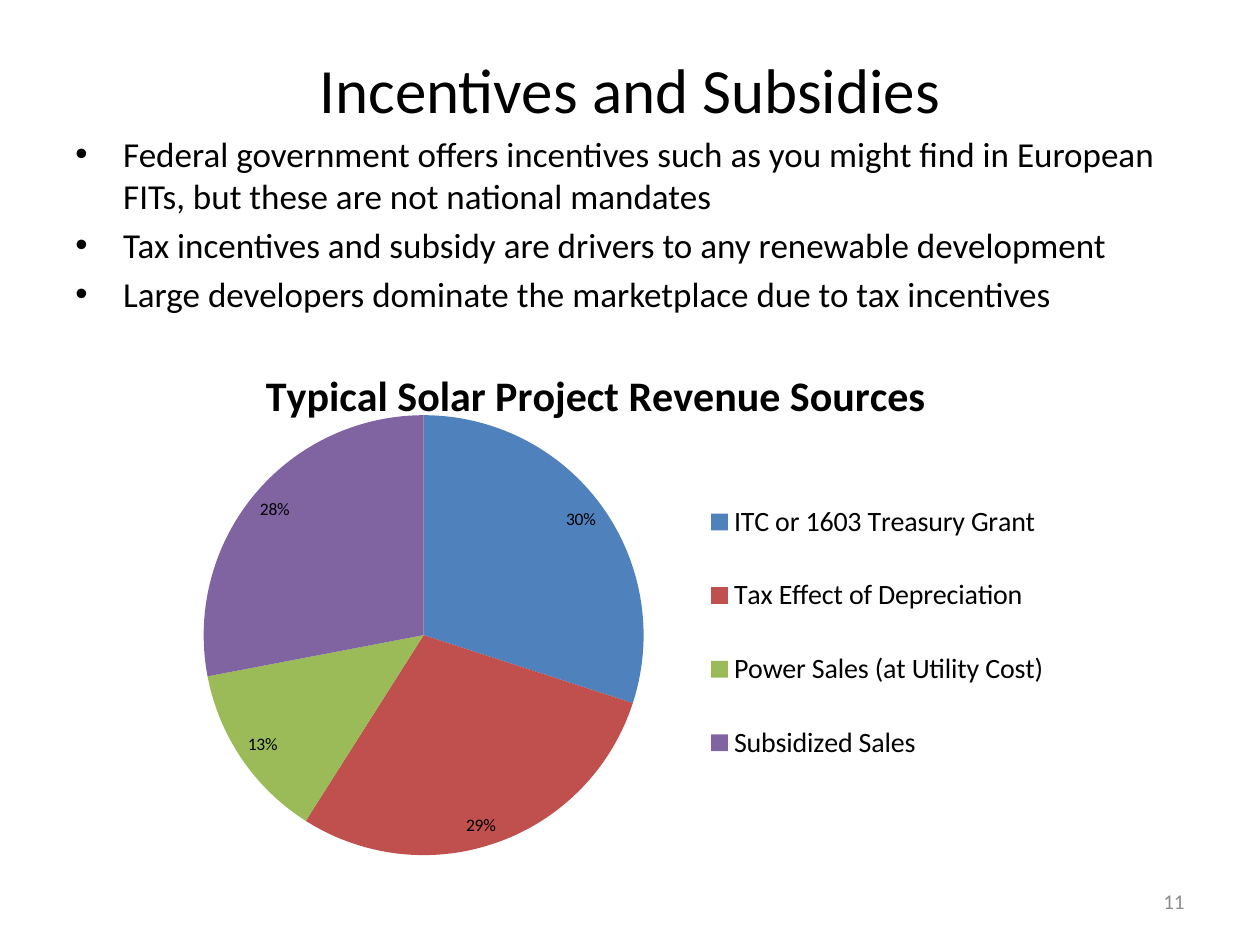
from lxml import etree
from pptx import Presentation
from pptx import util as u
from pptx.chart.data import CategoryChartData
from pptx.dml.color import RGBColor
from pptx.enum import chart as ch, text
from pptx.oxml.ns import qn

COLORS = {"text": "000000", "number": "8C8C8C", "grant": "4F81BD",
          "depreciation": "C0504D", "power": "9BBB59", "subsidized": "8064A2"}

BULLETS = [
    "Federal government offers incentives such as you might find in European "
    "FITs, but these are not national mandates",
    "Tax incentives and subsidy are drivers to any renewable development",
    "Large developers dominate the marketplace due to tax incentives",
]

SOURCES = [
    ("ITC or 1603 Treasury Grant", 30, "grant"),
    ("Tax Effect of Depreciation", 29, "depreciation"),
    ("Power Sales (at Utility Cost)", 13, "power"),
    ("Subsidized Sales", 28, "subsidized"),
]


def set_layout(parent, index, inner=False, **fractions):
    """Place a chart part by fractions of the chart area."""
    for old in parent.findall(qn("c:layout")):
        parent.remove(old)
    layout = etree.Element(qn("c:layout"))
    manual = etree.SubElement(layout, qn("c:manualLayout"))
    if inner:
        etree.SubElement(manual, qn("c:layoutTarget"), val="inner")
    for key in "xy":
        etree.SubElement(manual, qn(f"c:{key}Mode"), val="edge")
    for key, value in fractions.items():
        etree.SubElement(manual, qn(f"c:{key}"), val=str(value))
    parent.insert(index, layout)


class Deck:
    font = "Calibri"

    def __init__(self, prs):
        self.slide = prs.slides.add_slide(prs.slide_layouts[5])

    def style(self, font, size, color="text", bold=False):
        font.name, font.size, font.bold = self.font, u.Pt(size), bold
        font.color.rgb = RGBColor.from_string(COLORS[color])

    def run(self, p, words, size, color="text", bold=False):
        r = p.add_run()
        r.text = words
        self.style(r.font, size, color, bold)

    def title(self, words, box):
        sp = self.slide.shapes.title
        sp.left, sp.top, sp.width, sp.height = map(u.Inches, box)
        tf = sp.text_frame
        tf.vertical_anchor = text.MSO_ANCHOR.MIDDLE
        tf.paragraphs[0].alignment = text.PP_ALIGN.CENTER
        self.run(tf.paragraphs[0], words, 36)

    def text_box(self, box):
        tf = self.slide.shapes.add_textbox(*map(u.Inches, box)).text_frame
        tf.word_wrap = True
        return tf

    def bullets(self, items, box):
        tf = self.text_box(box)
        for i, item in enumerate(items):
            p = tf.add_paragraph() if i else tf.paragraphs[0]
            pPr = p._p.get_or_add_pPr()
            pPr.set("marL", str(u.Inches(0.38)))
            pPr.set("indent", str(u.Inches(-0.38)))
            etree.SubElement(pPr, qn("a:buFont"), typeface="Arial")
            etree.SubElement(pPr, qn("a:buChar"), char="•")
            if i:
                p.space_before = u.Pt(4)
            self.run(p, item, 20)

    def page_number(self, number, box):
        tf = self.text_box(box)
        tf.vertical_anchor = text.MSO_ANCHOR.MIDDLE
        tf.paragraphs[0].alignment = text.PP_ALIGN.RIGHT
        self.run(tf.paragraphs[0], number, 12, "number")

    def pie(self, heading, rows, box):
        names, values, colors = zip(*rows)
        data = CategoryChartData()
        data.categories = names
        data.add_series("Series 1", values)
        chart = self.slide.shapes.add_chart(
            ch.XL_CHART_TYPE.PIE, *map(u.Inches, box), data).chart
        self.style(chart.font, 10)

        # Heading
        chart.has_title = True
        title = chart.chart_title
        self.run(title.text_frame.paragraphs[0], heading, 24, bold=True)
        set_layout(title._element, 1, x=0.14, y=0.08)

        # Slices and their percentages
        plot = chart.plots[0]
        plot.vary_by_categories = True
        for i, color in enumerate(colors):
            fill = plot.series[0].points[i].format.fill
            fill.solid()
            fill.fore_color.rgb = RGBColor.from_string(COLORS[color])
        plot.has_data_labels = True
        labels = plot.data_labels
        labels.show_percentage, labels.show_value = True, False
        labels.number_format, labels.number_format_is_linked = "0%", False
        labels.position = ch.XL_LABEL_POSITION.INSIDE_END
        self.style(labels.font, 10)
        plot_area = chart._chartSpace.find(".//" + qn("c:plotArea"))
        set_layout(plot_area, 0, True, x=0.08, y=0.18, w=0.47, h=0.79)

        # Legend
        chart.has_legend = True
        chart.legend.position = ch.XL_LEGEND_POSITION.RIGHT
        chart.legend.include_in_layout = False
        self.style(chart.legend.font, 16)
        set_layout(chart.legend._element, 1, x=0.6, y=0.27, w=0.39, h=0.6)


def main():
    prs = Presentation()
    prs.slide_width, prs.slide_height = u.Inches(10), u.Inches(7.5)
    deck = Deck(prs)
    deck.title("Incentives and Subsidies", (0.5, 0.33, 9, 0.75))
    deck.bullets(BULLETS, (0.5, 1, 9, 5.7))
    deck.page_number("11", (7.17, 6.95, 2.33, 0.4))
    deck.pie("Typical Solar Project Revenue Sources", SOURCES, (1, 2.5, 7.5, 4.42))
    prs.save("out.pptx")


if __name__ == "__main__":
    main()
